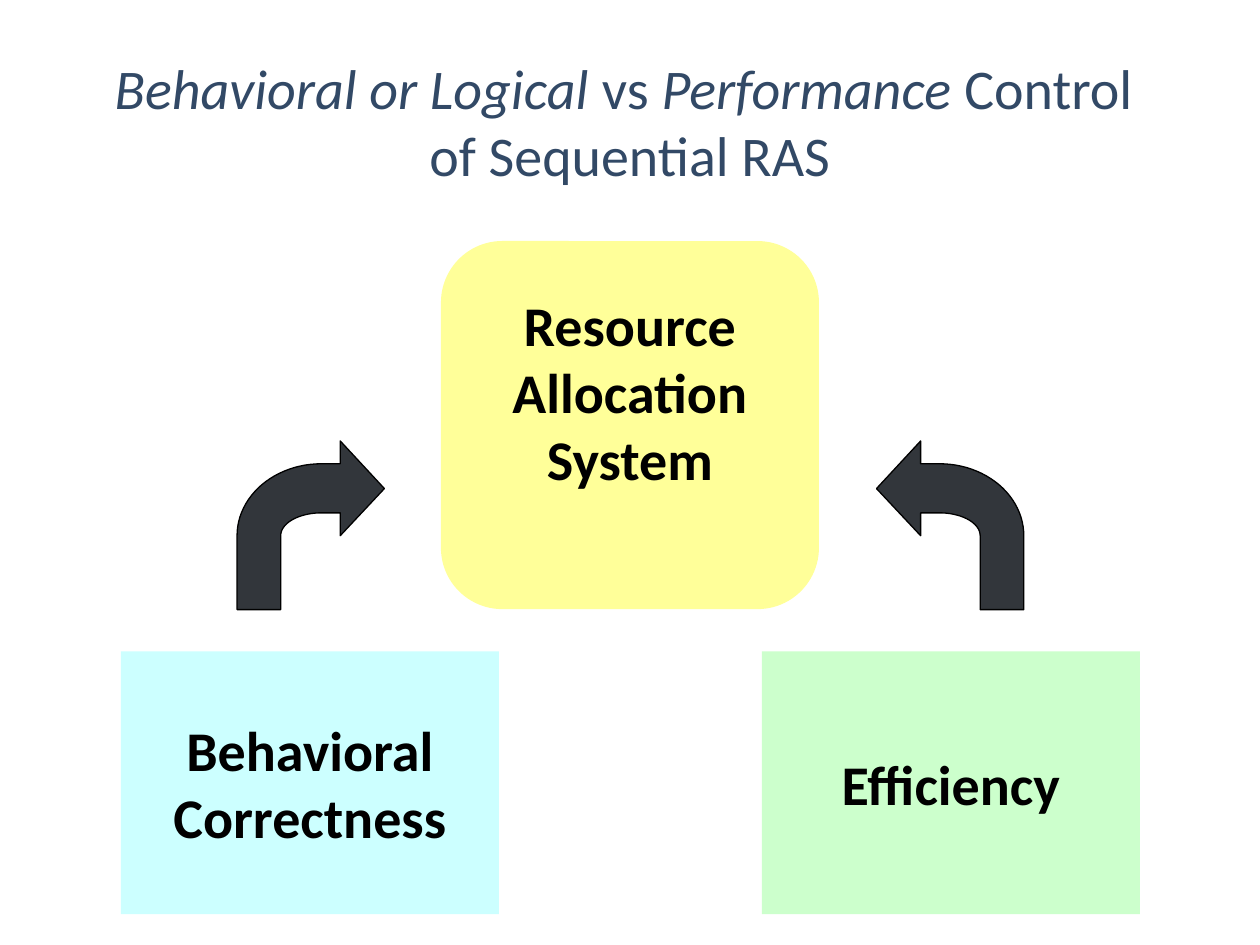
import math
from dataclasses import dataclass

import pptx
import pptx.dml.color
import pptx.enum.shapes
import pptx.enum.text
import pptx.util

Cm = pptx.util.Cm
Pt = pptx.util.Pt
Shapes = pptx.enum.shapes.MSO_SHAPE

AXIS = 12.71  # the two factors mirror each other about this line (cm)
FONT = "Calibri"


@dataclass
class Box:
    text: str
    left: float
    top: float
    height: float
    fill: str
    shape: int = Shapes.RECTANGLE
    bottom_inset: float = 0.13
    width: float = 7.62


BOXES = [
    Box("Resource\nAllocation\nSystem", 8.89, 4.86, 7.42, "FFFF99",
        Shapes.ROUNDED_RECTANGLE, bottom_inset=1.5),
    Box("Behavioral\nCorrectness", 2.44, 13.13, 5.3, "CCFFFF"),
    Box("Efficiency", 15.36, 13.13, 5.3, "CCFFCC"),
]

# Title lines as (wording, italic) spans
TITLE = [
    [("Behavioral or Logical", True), (" vs ", False),
     ("Performance", True), (" Control ", False)],
    [("of Sequential RAS", False)],
]


def colour(code: str) -> pptx.dml.color.RGBColor:
    return pptx.dml.color.RGBColor.from_string(code)


def style_font(font, code: str, bold: bool = False, italic: bool = False) -> None:
    font.name = FONT
    font.size = Pt(32)
    font.bold = bold
    font.italic = italic
    font.color.rgb = colour(code)


def add_title(page) -> None:
    title = page.shapes.add_textbox(Cm(1.9), Cm(0.84), Cm(21.6), Cm(3.18))
    frame = title.text_frame
    frame.word_wrap = True
    frame.vertical_anchor = pptx.enum.text.MSO_ANCHOR.MIDDLE
    para = frame.paragraphs[0]
    para.alignment = pptx.enum.text.PP_ALIGN.CENTER
    for number, line in enumerate(TITLE):
        if number:
            para.add_line_break()
        for wording, italic in line:
            span = para.add_run()
            span.text = wording
            style_font(span.font, "324966", italic=italic)


def add_box(page, box: Box) -> None:
    shape = page.shapes.add_shape(
        box.shape, Cm(box.left), Cm(box.top), Cm(box.width), Cm(box.height))
    shape.shadow.inherit = False
    shape.fill.solid()
    shape.fill.fore_color.rgb = colour(box.fill)
    shape.line.fill.background()
    frame = shape.text_frame
    frame.text = box.text
    frame.word_wrap = False
    frame.vertical_anchor = pptx.enum.text.MSO_ANCHOR.MIDDLE
    frame.margin_bottom = Cm(box.bottom_inset)
    for para in frame.paragraphs:
        para.alignment = pptx.enum.text.PP_ALIGN.CENTER
        for span in para.runs:
            style_font(span.font, "000000", bold=True)


def quarter_arc(centre_x: float, centre_y: float, radius_x: float,
                radius_y: float, steps: int = 24) -> list[tuple[float, float]]:
    """Points from the top of an ellipse round to its left side."""
    angles = [math.pi / 2 * step / steps for step in range(steps + 1)]
    return [(centre_x - radius_x * math.sin(angle),
             centre_y - radius_y * math.cos(angle)) for angle in angles]


def add_bent_arrow(page, mirrored: bool) -> None:
    head, bend_x, bend_y, foot = 6.86, 6.48, 10.8, 12.29
    outer = quarter_arc(bend_x, bend_y, 1.7, 1.45)
    inner = quarter_arc(bend_x, bend_y, 0.82, 0.46)
    points = [(7.75, 9.85), (head, 8.89), (head, 9.35), *outer,
              (4.78, foot), (5.66, foot), *reversed(inner),
              (head, 10.34), (head, 10.8)]
    if mirrored:
        points = [(2 * AXIS - x, y) for x, y in points]
    corners = [(Cm(x), Cm(y)) for x, y in points]
    builder = page.shapes.build_freeform(*corners[0], scale=1.0)
    builder.add_line_segments(corners[1:], close=True)
    arrow = builder.convert_to_shape()
    arrow.shadow.inherit = False
    arrow.fill.solid()
    arrow.fill.fore_color.rgb = colour("32363B")
    arrow.line.color.rgb = colour("000000")
    arrow.line.width = Pt(0.75)


def main() -> None:
    deck = pptx.Presentation()
    deck.slide_width, deck.slide_height = Cm(25.4), Cm(19.05)
    page = deck.slides.add_slide(deck.slide_layouts[6])

    add_title(page)

    # The system and the two factors that control it
    for box in BOXES:
        add_box(page, box)

    # Arrows from the factors to the system
    for mirrored in (False, True):
        add_bent_arrow(page, mirrored)

    deck.save("out.pptx")


if __name__ == "__main__":
    main()
